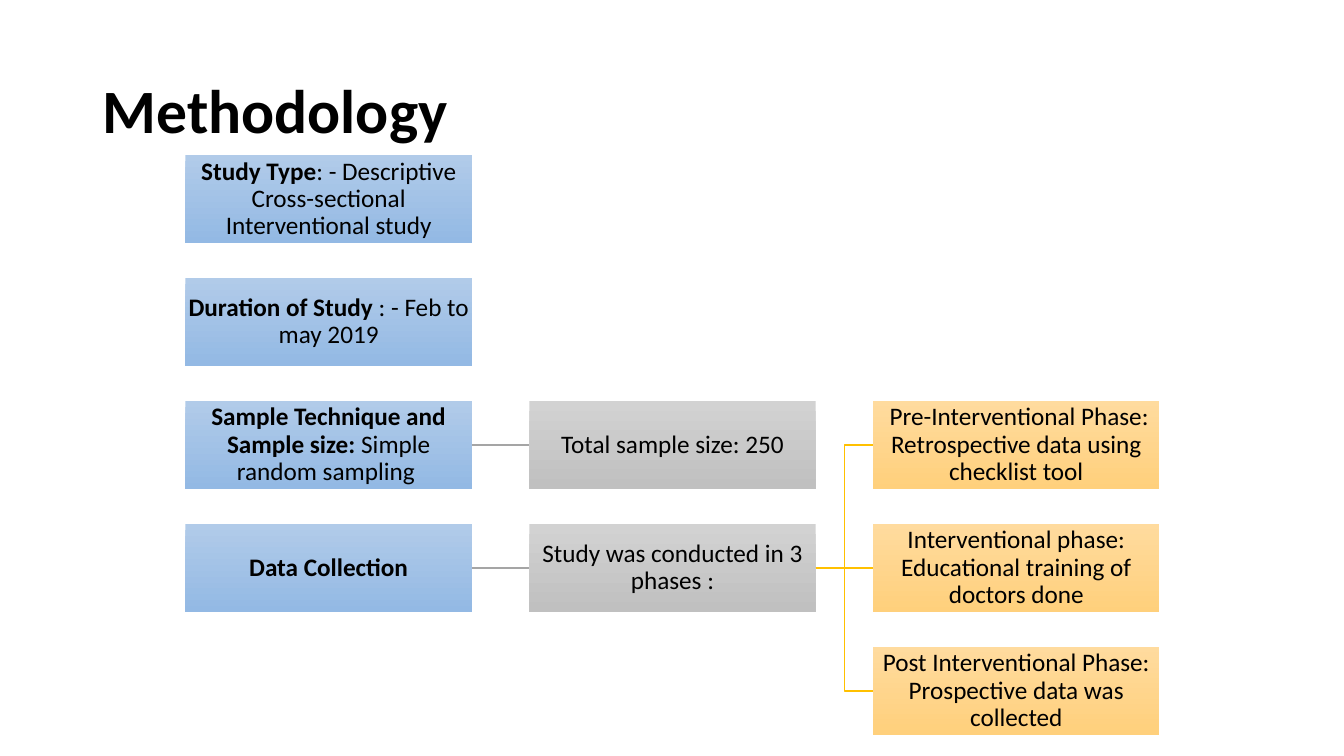
from lxml.etree import SubElement
from pptx import Presentation
from pptx.dml.color import RGBColor
from pptx.enum.shapes import MSO_CONNECTOR, MSO_SHAPE
from pptx.enum.text import MSO_ANCHOR, PP_ALIGN
from pptx.oxml.ns import qn
from pptx.util import Inches, Pt

BLACK = RGBColor(0x00, 0x00, 0x00)
GREY_LINE = RGBColor(0xA5, 0xA5, 0xA5)
GOLD_LINE = RGBColor(0xFF, 0xC0, 0x00)
BLUE = (RGBColor(0xB1, 0xCB, 0xE9), RGBColor(0x93, 0xB9, 0xE4))
GREY = (RGBColor(0xD2, 0xD2, 0xD2), RGBColor(0xC0, 0xC0, 0xC0))
GOLD = (RGBColor(0xFF, 0xDB, 0x9E), RGBColor(0xFF, 0xD0, 0x7C))
COLUMN_FILLS = (BLUE, GREY, GOLD)

FONT = "Calibri"
GRID_LEFT, GRID_TOP = 1.84, 1.54
COLUMN_STEP, ROW_STEP = 3.41, 1.22
BOX_WIDTH, BOX_HEIGHT = 2.84, 0.87
LEFT_SITE, RIGHT_SITE = 1, 3

STEPS = {
    (0, 0): ("Study Type", ": - Descriptive Cross-sectional Interventional study"),
    (0, 1): ("Duration of Study ", ": - Feb to may 2019"),
    (0, 2): ("Sample Technique and Sample size: ", "Simple random sampling "),
    (0, 3): ("Data Collection", ""),
    (1, 2): ("", "Total sample size: 250"),
    (1, 3): ("", "Study was conducted in 3 phases :"),
    (2, 2): ("", " Pre-Interventional Phase: Retrospective data using checklist tool"),
    (2, 3): ("", "Interventional phase: Educational training of doctors done"),
    (2, 4): ("", "Post Interventional Phase: Prospective data was collected"),
}
LINKS = (
    ((0, 2), (1, 2), GREY_LINE),
    ((0, 3), (1, 3), GREY_LINE),
    ((1, 3), (2, 2), GOLD_LINE),
    ((1, 3), (2, 3), GOLD_LINE),
    ((1, 3), (2, 4), GOLD_LINE),
)


def style_paragraph(para, size, alignment):
    para.alignment = alignment
    para.line_spacing = 0.9
    para.font.name = FONT
    para.font.size = Pt(size)
    para.font.color.rgb = BLACK


def set_title(page, text):
    title = page.shapes.title
    title.left, title.top = Inches(0.92), Inches(0.4)
    title.width, title.height = Inches(11.5), Inches(1.45)
    frame = title.text_frame
    frame.text = text
    frame.vertical_anchor = MSO_ANCHOR.MIDDLE
    para = frame.paragraphs[0]
    style_paragraph(para, 44, PP_ALIGN.LEFT)
    para.font.bold = True


def add_step(page, column, row, label, detail):
    box = page.shapes.add_shape(
        MSO_SHAPE.RECTANGLE,
        Inches(GRID_LEFT + column * COLUMN_STEP),
        Inches(GRID_TOP + row * ROW_STEP),
        Inches(BOX_WIDTH),
        Inches(BOX_HEIGHT),
    )
    box.shadow.inherit = False
    box.line.fill.background()
    box.fill.gradient()
    box.fill.gradient_angle = 270
    for stop, color in zip(box.fill.gradient_stops, COLUMN_FILLS[column]):
        stop.color.rgb = color
    frame = box.text_frame
    frame.word_wrap = True
    frame.vertical_anchor = MSO_ANCHOR.MIDDLE
    frame.margin_left = frame.margin_right = Inches(0.01)
    frame.margin_top = frame.margin_bottom = Inches(0.01)
    para = frame.paragraphs[0]
    style_paragraph(para, 18, PP_ALIGN.CENTER)
    for text, bold in ((label, True), (detail, False)):
        if text:
            span = para.add_run()
            span.text = text
            span.font.bold = bold
    return box


def add_link(page, start, end, color):
    level = start.top == end.top
    kind = MSO_CONNECTOR.STRAIGHT if level else MSO_CONNECTOR.ELBOW
    link = page.shapes.add_connector(kind, 0, 0, 0, 0)
    link.begin_connect(start, RIGHT_SITE)
    link.end_connect(end, LEFT_SITE)
    link.line.color.rgb = color
    link.line.width = Pt(1)
    SubElement(link._element.spPr, qn("a:effectLst"))


def main():
    deck = Presentation()
    deck.slide_width, deck.slide_height = Inches(13.33), Inches(7.5)
    page = deck.slides.add_slide(deck.slide_layouts.get_by_name("Title Only"))
    set_title(page, "Methodology")
    boxes = {cell: add_step(page, *cell, *texts) for cell, texts in STEPS.items()}
    for start, end, color in LINKS:
        add_link(page, boxes[start], boxes[end], color)
    deck.save("out.pptx")


if __name__ == "__main__":
    main()
